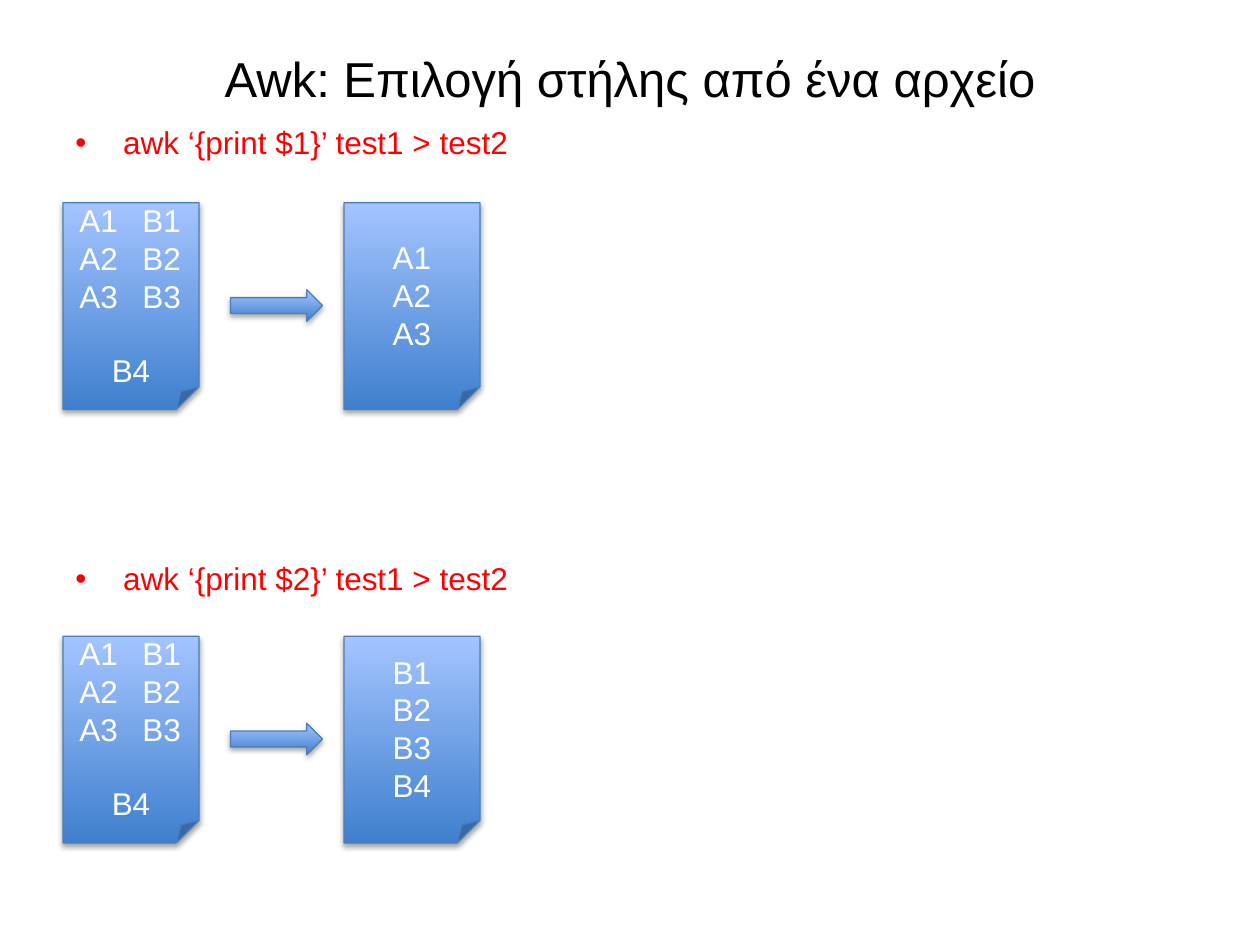
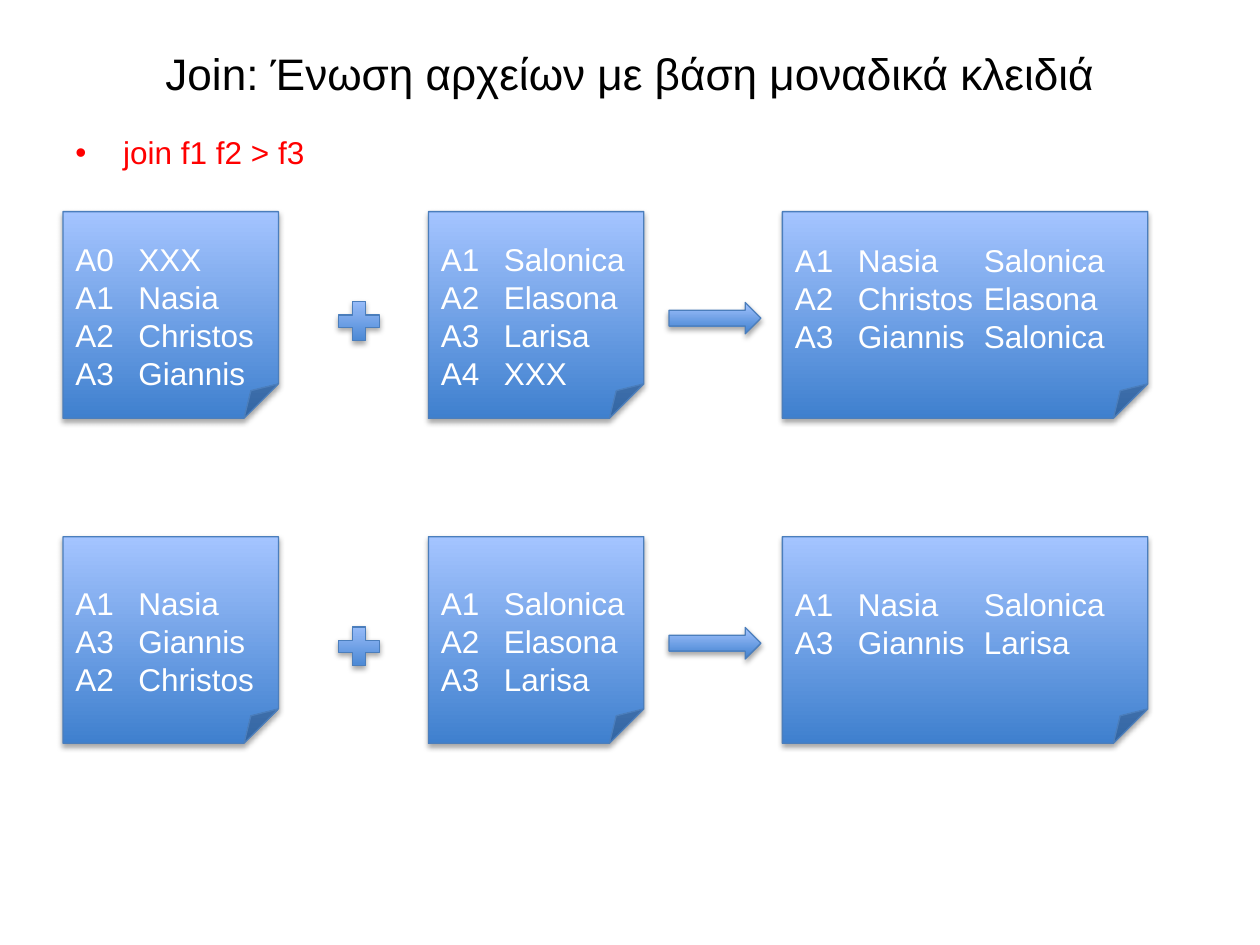
import lxml.etree
import pptx
import pptx.dml.color
import pptx.enum.shapes
import pptx.enum.text
import pptx.oxml.ns
import pptx.util

Inches, Pt = pptx.util.Inches, pptx.util.Pt
KIND = pptx.enum.shapes.MSO_SHAPE
ALIGN = pptx.enum.text.PP_ALIGN
MIDDLE = pptx.enum.text.MSO_ANCHOR.MIDDLE
qn = pptx.oxml.ns.qn

FONT = "Arial"
BLACK, WHITE, RED = "000000", "FFFFFF", "FF0000"
DARK, LIGHT, EDGE = "3F80CE", "A4C4FF", "4B7EBC"
LEFT, WIDE = 0.5, 9
PAGE = 1.64        # height of a file page
LINE = 0.29        # height of one text line
TABS = (0.5, 1.5)

AWK_TITLE = "Awk: Επιλογή στήλης από ένα αρχείο"
TABLE = ["A1\tB1", "A2\tB2", "A3\tB3", "B4"]
AWK = [  # command, its top, top of the pages, result
    ("awk ‘{print $1}’ test1 > test2", 0.93, 1.61, ["A1", "A2", "A3"]),
    ("awk ‘{print $2}’ test1 > test2", 4.39, 5.05, ["Β1", "Β2", "Β3", "Β4"]),
]

JOIN_TITLE = "Join: Ένωση αρχείων με βάση μοναδικά κλειδιά"
JOIN_CMD = "join f1 f2 > f3"
JOIN = [  # top of the pages, first file, second file, result
    (1.68,
     ["A0\tXXX", "A1\tNasia", "A2\tChristos", "A3\tGiannis"],
     ["A1\tSalonica", "A2\tElasona", "A3\tLarisa", "A4\tXXX"],
     ["A1\tNasia\tSalonica", "A2\tChristos\tElasona", "A3\tGiannis\tSalonica"]),
    (4.26,
     ["A1\tNasia", "A3\tGiannis", "A2\tChristos"],
     ["A1\tSalonica", "A2\tElasona", "A3\tLarisa"],
     ["A1\tNasia\tSalonica", "A3\tGiannis\tLarisa"]),
]


def rgb(code):
    return pptx.dml.color.RGBColor.from_string(code)


def child(node, tag, **attrs):
    return lxml.etree.SubElement(node, qn(tag), {k: str(v) for k, v in attrs.items()})


def style(para, size, color):
    for run in para.runs:
        run.font.name, run.font.size = FONT, Pt(size)
        run.font.color.rgb = rgb(color)


def label(slide, text, top, high, size, color):
    box = slide.shapes.add_textbox(Inches(LEFT), Inches(top), Inches(WIDE), Inches(high))
    frame = box.text_frame
    frame.word_wrap = True
    frame.text = text
    style(frame.paragraphs[0], size, color)
    return frame


def title(slide, text, high, size):
    frame = label(slide, text, 0.3, high, size, BLACK)
    frame.vertical_anchor = MIDDLE
    frame.paragraphs[0].alignment = ALIGN.CENTER


def command(slide, text, top):
    """Add a red bulleted command line."""
    frame = label(slide, text, top, 0.49, 18, RED)
    props = frame.paragraphs[0]._p.get_or_add_pPr()
    props.set("marL", str(Inches(0.38)))
    props.set("indent", str(-Inches(0.38)))
    child(props, "a:buFont", typeface=FONT)
    child(props, "a:buChar", char="•")


def block(slide, kind, left, top, width, high):
    """Add a preset shape with the shared gradient, edge and shadow."""
    shape = slide.shapes.add_shape(
        kind, Inches(left), Inches(top), Inches(width), Inches(high))
    shape.fill.gradient()
    shape.fill.gradient_angle = 90
    for stop, color in zip(shape.fill.gradient_stops, (DARK, LIGHT)):
        stop.color.rgb = rgb(color)
        stop.position = float(color == LIGHT)
    shape.line.color.rgb = rgb(EDGE)
    shape.line.width = Pt(0.75)
    shape.shadow.inherit = False
    effects = shape._element.spPr.find(qn("a:effectLst"))
    shade = child(effects, "a:outerShdw", blurRad=Pt(3.1), dist=Pt(1.8),
                  dir=90 * 60000, rotWithShape=0)
    child(child(shade, "a:srgbClr", val=BLACK), "a:alpha", val=35000)
    return shape


def page(slide, left, top, width, rows, inset=0.1, lead=0):
    """Add a file page; rows with tabs start at the left, others are centred."""
    frame = block(slide, KIND.FOLDED_CORNER, left, top, width, PAGE).text_frame
    frame.word_wrap = True
    frame.vertical_anchor = MIDDLE
    frame.margin_left = frame.margin_right = Inches(inset)
    frame.margin_top = Inches(0.05 + lead)
    frame.text = "\n".join(rows)
    for para in frame.paragraphs:
        tabbed = "\t" in para.text
        para.alignment = ALIGN.LEFT if tabbed else ALIGN.CENTER
        if tabbed:
            stops = child(para._p.get_or_add_pPr(), "a:tabLst")
            for pos in TABS:
                child(stops, "a:tab", pos=Inches(pos), algn="l")
        style(para, 18, WHITE)
    return frame


def arrow(slide, left, top):
    block(slide, KIND.RIGHT_ARROW, left, top, 0.73, 0.25)


def awk(slide):
    title(slide, AWK_TITLE, 0.63, 28)
    for text, head, top, result in AWK:
        command(slide, text, head)
        source = page(slide, LEFT, top, 1.08, TABLE, inset=0.13)
        source.paragraphs[-1].space_before = Inches(LINE)
        arrow(slide, 1.83, top + 0.69)
        page(slide, 2.73, top, 1.08, result)


def join(slide):
    title(slide, JOIN_TITLE, 0.55, 25.2)
    command(slide, JOIN_CMD, 1.01)
    for top, first, second, result in JOIN:
        page(slide, LEFT, top, 1.71, first, lead=LINE)
        block(slide, KIND.MATH_PLUS, 2.63, top + 0.66, 0.44, 0.42)
        page(slide, 3.4, top, 1.71, second, lead=LINE)
        arrow(slide, 5.31, top + 0.72)
        page(slide, 6.21, top, 2.9, result)


def main():
    deck = pptx.Presentation()
    deck.slide_width, deck.slide_height = Inches(10), Inches(7.5)
    for build in (awk, join):
        build(deck.slides.add_slide(deck.slide_layouts[6]))
    deck.save("out.pptx")


if __name__ == "__main__":
    main()
